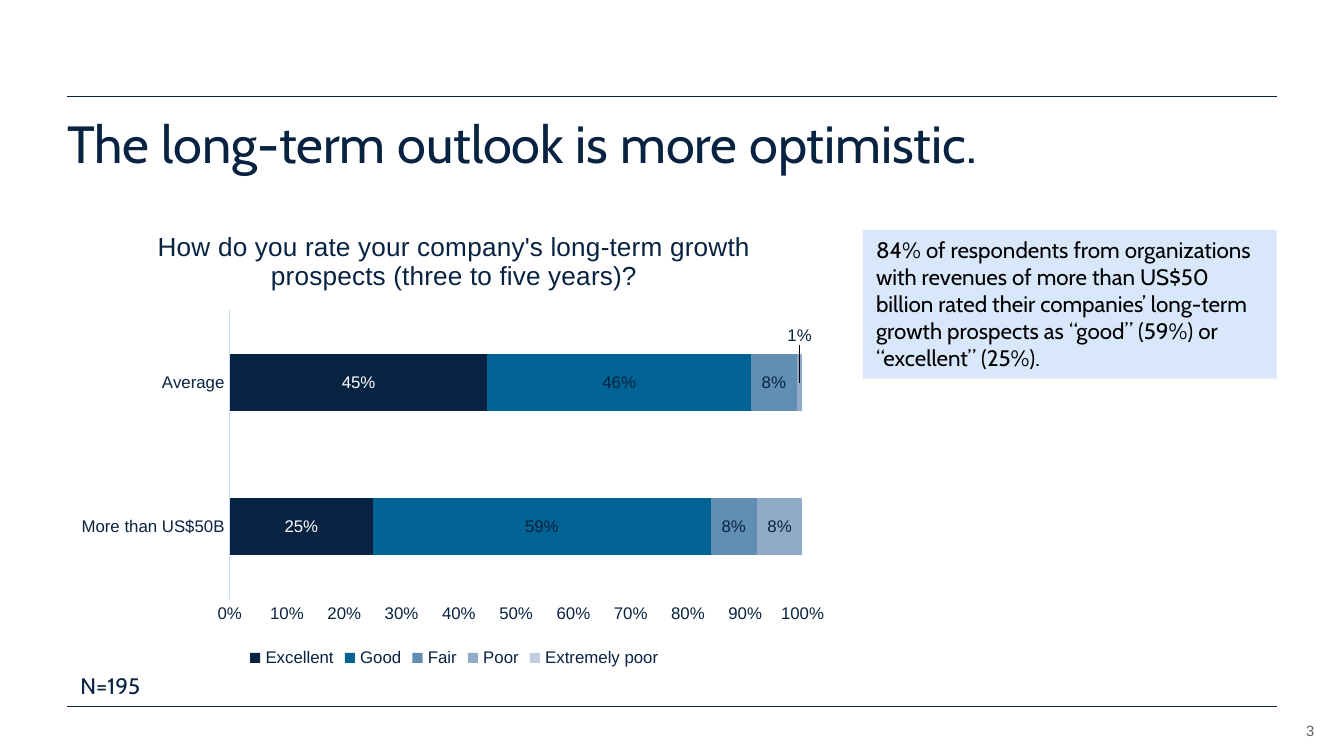
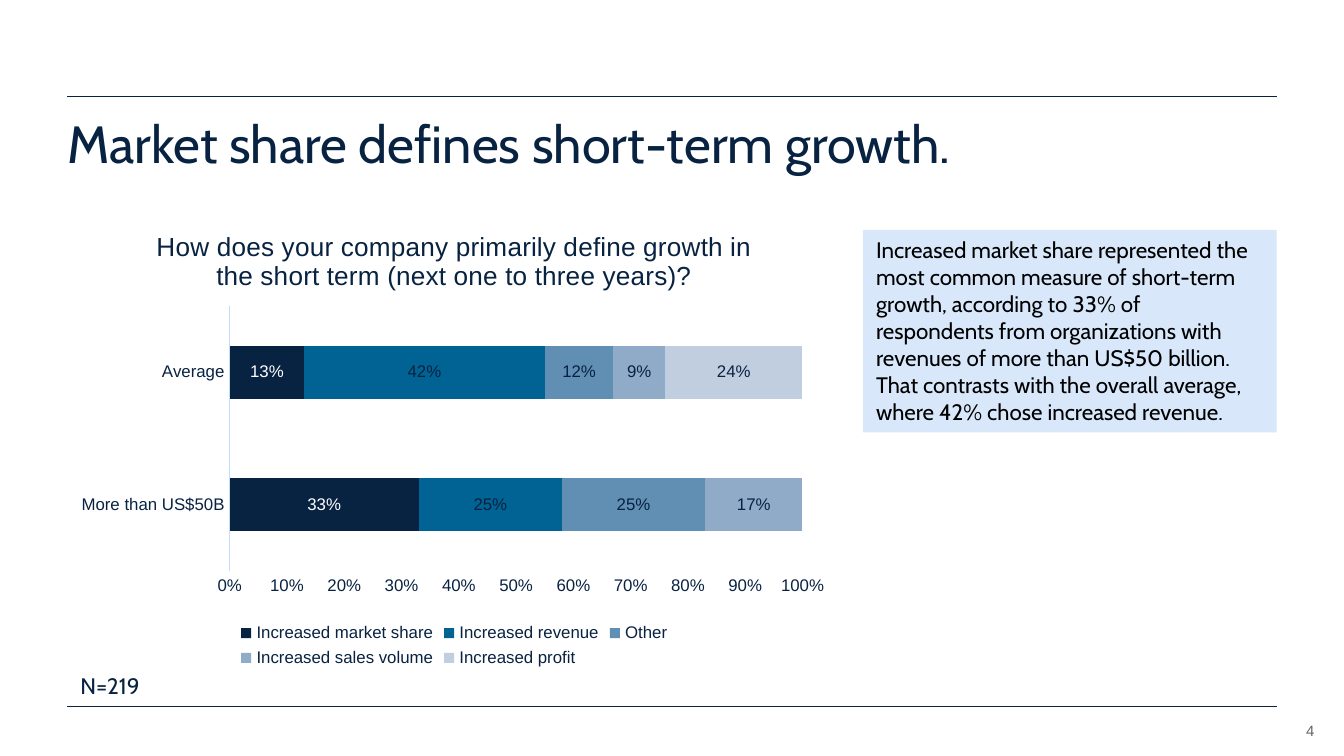
from dataclasses import dataclass
from lxml import etree
from pptx import Presentation
from pptx import util as u
from pptx.chart.data import CategoryChartData
from pptx.dml.color import RGBColor
from pptx.enum import chart as ch
from pptx.enum import shapes, text
from pptx.oxml import ns


@dataclass(frozen=True)
class Theme:
    navy: str = "082241"
    pale: str = "D8E8FA"
    axis: str = "C5DCF8"
    gray: str = "666666"
    black: str = "000000"
    white: str = "FFFFFF"
    bars: tuple = ("082241", "006393", "618EB3", "8FABC8", "C1CEDF")
    head: str = "Cabin"
    plain: str = "Arial"
    title: int = 28
    ask: int = 14
    body: int = 12
    label: int = 9
    page: int = 8


def color(code):
    return RGBColor.from_string(code)


def style(font, face, size, tint):
    font.name = face
    font.size = u.Pt(size)
    font.color.rgb = color(tint)
    font.bold = False


def write(frame, words, face, size, tint, align=None, space=None):
    para = frame.paragraphs[0]
    para.alignment = align
    para.line_spacing = space
    run = para.add_run()
    run.text = words
    style(run.font, face, size, tint)


def layout(parent, spot, target=None, **parts):
    node = etree.Element(ns.qn("c:layout"))
    manual = etree.SubElement(node, ns.qn("c:manualLayout"))
    if target:
        etree.SubElement(manual, ns.qn("c:layoutTarget")).set("val", target)
    for key, val in parts.items():
        etree.SubElement(manual, ns.qn(f"c:{key}")).set("val", str(val))
    for old in parent.findall(ns.qn("c:layout")):
        parent.remove(old)
    parent.insert(spot, node)


class Deck:
    def __init__(self, theme):
        self.theme = theme
        self.file = Presentation()
        self.file.slide_width = u.Inches(10)
        self.file.slide_height = u.Inches(5.625)
        self.slide = None

    def wide(self, share):
        return int(self.file.slide_width * share / 100)

    def tall(self, share):
        return int(self.file.slide_height * share / 100)

    def area(self, x, y, w, h):
        return self.wide(x), self.tall(y), self.wide(w), self.tall(h)

    def start(self, title, page):
        t = self.theme
        self.slide = self.file.slides.add_slide(self.file.slide_layouts[5])
        for y in (12.8, 93.5):
            self.rule(y)
        self.label(str(page), (93.1, 94.6, 4.7, 3.2), t.plain, t.page, t.gray,
                   inset=0, anchor=text.MSO_ANCHOR.BOTTOM,
                   align=text.PP_ALIGN.RIGHT)
        shape = self.slide.shapes.title
        shape.left, shape.top, shape.width, shape.height = self.area(5, 15.65, 90, 9.8)
        self.frame(shape, 0)
        write(shape.text_frame, title, t.head, t.title, t.navy,
              align=text.PP_ALIGN.LEFT, space=0.9)

    def frame(self, shape, inset=None, anchor=text.MSO_ANCHOR.TOP):
        frame = shape.text_frame
        frame.word_wrap = True
        frame.auto_size = text.MSO_AUTO_SIZE.NONE
        frame.vertical_anchor = anchor
        if inset is not None:
            frame.margin_left = frame.margin_right = inset
            frame.margin_top = frame.margin_bottom = inset
        return frame

    def rule(self, y):
        line = self.slide.shapes.add_connector(
            shapes.MSO_CONNECTOR.STRAIGHT,
            self.wide(5), self.tall(y), self.wide(95), self.tall(y))
        line.line.color.rgb = color(self.theme.navy)
        line.line.width = u.Pt(0.5)
        etree.SubElement(line._element.spPr, ns.qn("a:effectLst"))

    def label(self, words, area, face, size, tint, inset=None,
              anchor=text.MSO_ANCHOR.TOP, align=None):
        box = self.slide.shapes.add_textbox(*self.area(*area))
        write(self.frame(box, inset, anchor), words, face, size, tint, align=align)

    def callout(self, words, height):
        t = self.theme
        box = self.slide.shapes.add_shape(
            shapes.MSO_SHAPE.RECTANGLE, *self.area(64.2, 30.4, 30.8, height))
        box.shadow.inherit = False
        box.fill.solid()
        box.fill.fore_color.rgb = color(t.pale)
        box.line.fill.background()
        frame = self.frame(box)
        frame.auto_size = text.MSO_AUTO_SIZE.SHAPE_TO_FIT_TEXT
        write(frame, words, t.head, t.body, t.black, align=text.PP_ALIGN.LEFT)

    def count(self, words):
        t = self.theme
        self.label(words, (5, 88, 8.8, 5.3), t.head, t.body, t.navy)

    def chart(self, ask, rows, top, height, lift=None):
        t = self.theme
        data = CategoryChartData(number_format="0%")
        data.categories = ["More than US$50B", "Average"]
        for name, vals in rows:
            data.add_series(name, vals)
        chart = self.slide.shapes.add_chart(
            ch.XL_CHART_TYPE.BAR_STACKED_100,
            *self.area(5, 27.55, 57.6, 61.5), data).chart
        style(chart.font, t.plain, 10, t.navy)
        chart.has_title = True
        write(chart.chart_title.text_frame, ask, t.plain, t.ask, t.navy)
        chart.chart_title.include_in_layout = False
        chart.has_legend = True
        chart.legend.position = ch.XL_LEGEND_POSITION.BOTTOM
        chart.legend.include_in_layout = False
        style(chart.legend.font, t.plain, t.label, t.navy)
        for axis in (chart.category_axis, chart.value_axis):
            axis.has_major_gridlines = False
            axis.major_tick_mark = axis.minor_tick_mark = ch.XL_TICK_MARK.NONE
            style(axis.tick_labels.font, t.plain, t.label, t.navy)
        line = chart.category_axis.format.line
        line.color.rgb = color(t.axis)
        line.width = u.Pt(0.75)
        scale = chart.value_axis
        scale.format.line.fill.background()
        scale.minimum_scale, scale.maximum_scale, scale.major_unit = 0, 1, 0.1
        scale.tick_labels.number_format = "0%"
        scale.tick_labels.number_format_is_linked = False
        plot = chart.plots[0]
        plot.gap_width, plot.overlap = 150, 100
        plot.vary_by_categories = False
        for run, tint in zip(plot.series, t.bars):
            run.format.fill.solid()
            run.format.fill.fore_color.rgb = color(tint)
            self.values(run.data_labels, t.white if tint == t.navy else t.navy)
        if lift:
            self.raise_label(plot.series[lift[0]], *lift[1:])
        layout(chart._chartSpace.chart.plotArea, 0, "inner", xMode="edge",
               yMode="edge", x=0.21, y=top, w=0.74, h=height)

    def values(self, labels, tint):
        labels.show_value = True
        labels.number_format = "0%"
        labels.number_format_is_linked = False
        labels.position = ch.XL_LABEL_POSITION.CENTER
        style(labels.font, self.theme.plain, self.theme.label, tint)

    def raise_label(self, run, point, shift):
        label = run.points[point].data_label
        label.position = ch.XL_LABEL_POSITION.CENTER
        style(label.font, self.theme.plain, self.theme.label, self.theme.navy)
        node = run.data_labels._element.find(ns.qn("c:dLbl"))
        layout(node, 1, x=0, y=shift)


def main():
    deck = Deck(Theme())

    deck.start("The long-term outlook is more optimistic.", 3)
    deck.callout("84% of respondents from organizations with revenues of more than "
                 "US$50 billion rated their companies’ long-term growth prospects "
                 "as “good” (59%) or “excellent” (25%).", 19.7)
    deck.count("N=195")
    deck.chart("How do you rate your company's long-term growth prospects "
               "(three to five years)?",
               [("Excellent", (0.25, 0.45)),
                ("Good", (0.59, 0.46)),
                ("Fair", (0.08, 0.08)),
                ("Poor", (0.08, 0.01)),
                ("Extremely poor", (None, None))],
               top=0.22, height=0.62, lift=(3, 1, -0.1))

    deck.start("Market share defines short-term growth.", 4)
    deck.callout("Increased market share represented the most common measure of "
                 "short-term growth, according to 33% of respondents from "
                 "organizations with revenues of more than US$50 billion. That "
                 "contrasts with the overall average, where 42% chose increased "
                 "revenue.", 26.8)
    deck.chart("How does your company primarily define growth in the short term "
               "(next one to three years)?",
               [("Increased market share", (0.33, 0.13)),
                ("Increased revenue", (0.25, 0.42)),
                ("Other", (0.25, 0.12)),
                ("Increased sales volume", (0.17, 0.09)),
                ("Increased profit", (None, 0.24))],
               top=0.21, height=0.57)
    deck.count("N=219")

    deck.file.save("out.pptx")


if __name__ == "__main__":
    main()
